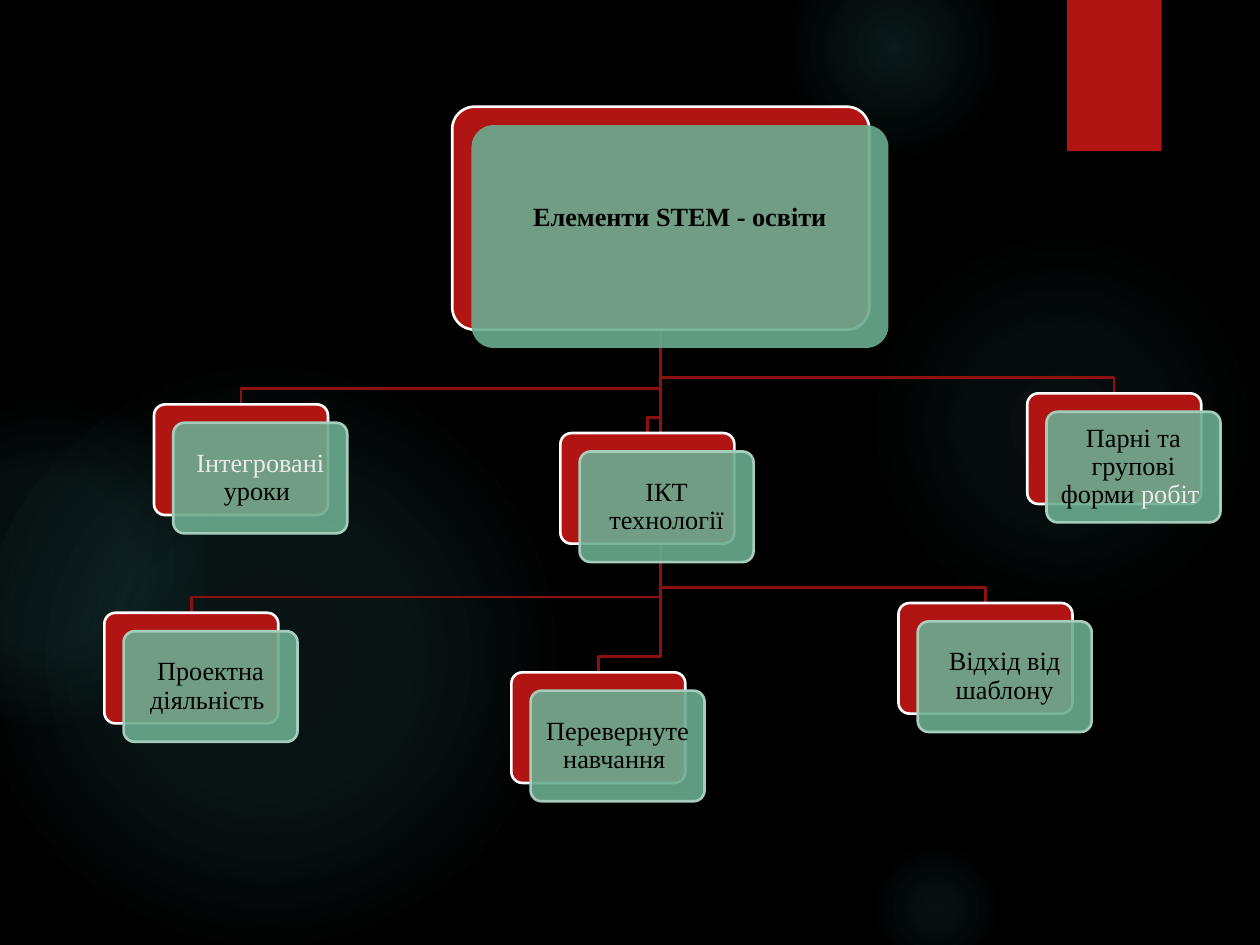
from dataclasses import dataclass

from pptx import Presentation
from pptx.dml.color import RGBColor
from pptx.enum.shapes import MSO_SHAPE as SHAPE
from pptx.enum.text import MSO_ANCHOR as ANCHOR, PP_ALIGN as ALIGN
from pptx.oxml import parse_xml
from pptx.oxml.ns import nsdecls, qn
from pptx.util import Pt


@dataclass(frozen=True)
class Theme:
    background: str = "000000"
    red: str = "B01513"
    link: str = "8D110F"
    white: str = "FFFFFF"
    green: str = "6AAC90"
    green_edge: str = "A6CDBC"
    glow: str = "50B9C1"
    dark: str = "000000"
    light: str = "EBEBEB"
    font: str = "Times New Roman"
    size: float = 15
    line: float = 1.5


THEME = Theme()

# Cards: a red back plate and a green front plate shifted by OFFSET
OFFSET = (11, 10.5)
CARD = (99.4, 63.2)
ROOT = (258.4, 61, 238.3, 127.4)
ELBOW = 9  # height of the last leg of each link

# Left, top, text runs with their colours
CHILDREN = [
    (88, 231.1, [("Інтегровані ", THEME.light), ("уроки ", THEME.dark)]),
    (59.6, 350.2, [("Проектна діяльність ", THEME.dark)]),
    (320.2, 247.5, [("ІКТ технології", THEME.dark)]),
    (292.2, 384.2, [("Перевернуте навчання ", THEME.dark)]),
    (513.4, 344.6, [("Відхід від шаблону", THEME.dark)]),
    (587, 224.8, [("Парні та групові форми ", THEME.dark), ("робіт ", THEME.light)]),
]

# Left, top, diameter, (position, opacity) stops in percent
GLOWS = [
    (496, 132, 222, [(0, 7), (36, 6), (69, 0)]),
    (448, -36, 126, [(0, 14), (36, 7), (73, 0)]),
    (496, 480, 78, [(0, 9), (36, 5), (66, 0)]),
    (-12, 210, 330, [(0, 11), (36, 10), (75, 0)]),
    (-66, 228, 186, [(0, 8), (36, 8), (72, 0)]),
]


def rgb(color):
    return RGBColor.from_string(color)


def set_line(sp, color=None):
    if color is None:
        sp.line.fill.background()
    else:
        sp.line.color.rgb = rgb(color)
        sp.line.width = Pt(THEME.line)


def add_shape(slide, kind, box, fill=None, line=None, alpha=None):
    sp = slide.shapes.add_shape(kind, *map(Pt, box))
    sp.shadow.inherit = False
    if fill:
        sp.fill.solid()
        sp.fill.fore_color.rgb = rgb(fill)
    if alpha is not None:
        color = sp.fill._xPr.find(qn("a:solidFill"))[0]
        color.append(parse_xml(f'<a:alpha {nsdecls("a")} val="{alpha * 1000}"/>'))
    set_line(sp, line)
    return sp


def add_glow(slide, left, top, diameter, stops):
    sp = add_shape(slide, SHAPE.OVAL, (left, top, diameter, diameter))
    stops_xml = "".join(
        f'<a:gs pos="{pos * 1000}"><a:srgbClr val="{THEME.glow}">'
        f'<a:alpha val="{alpha * 1000}"/></a:srgbClr></a:gs>'
        for pos, alpha in stops)
    gradient = parse_xml(
        f'<a:gradFill {nsdecls("a")}><a:gsLst>{stops_xml}</a:gsLst>'
        '<a:path path="circle"><a:fillToRect l="50000" t="50000" r="50000" b="50000"/>'
        '</a:path></a:gradFill>')
    sp.element.spPr.find(qn("a:prstGeom")).addnext(gradient)


def add_link(slide, left, top):
    """Draw the elbow from the root's bottom to the top of a child card."""
    x, y = ROOT[0] + ROOT[2] / 2, ROOT[1] + ROOT[3]
    child_x = left + CARD[0] / 2
    points = [(x, top - ELBOW), (child_x, top - ELBOW), (child_x, top)]
    fb = slide.shapes.build_freeform(Pt(x), Pt(y))
    fb.add_line_segments([(Pt(a), Pt(b)) for a, b in points], close=False)
    sp = fb.convert_to_shape()
    sp.shadow.inherit = False
    sp.fill.background()
    set_line(sp, THEME.link)


def write_text(sp, runs, bold=False, inset=4.4, bottom=4.4):
    tf = sp.text_frame
    tf.word_wrap = True
    tf.vertical_anchor = ANCHOR.MIDDLE
    tf.margin_left = tf.margin_right = tf.margin_top = Pt(inset)
    tf.margin_bottom = Pt(bottom)
    p = tf.paragraphs[0]
    p.alignment = ALIGN.CENTER
    p.line_spacing = 0.9
    for text, color in runs:
        r = p.add_run()
        r.text = text
        r.font.name = THEME.font
        r.font.size = Pt(THEME.size)
        r.font.bold = bold
        r.font.color.rgb = rgb(color)


def add_card(slide, box, runs, edge=None, **text_format):
    left, top, width, height = box
    front_box = (left + OFFSET[0], top + OFFSET[1], width, height)
    back = add_shape(slide, SHAPE.ROUNDED_RECTANGLE, box, THEME.red, THEME.white)
    front = add_shape(slide, SHAPE.ROUNDED_RECTANGLE, front_box, THEME.green, edge, alpha=90)
    for sp in (back, front):
        sp.adjustments[0] = 0.1
    write_text(front, runs, **text_format)


def main():
    prs = Presentation()
    prs.slide_width, prs.slide_height = Pt(720), Pt(540)
    slide = prs.slides.add_slide(prs.slide_layouts[6])

    # Background with soft glows and the red tab
    slide.background.fill.solid()
    slide.background.fill.fore_color.rgb = rgb(THEME.background)
    for glow in GLOWS:
        add_glow(slide, *glow)
    add_shape(slide, SHAPE.RECTANGLE, (609.8, 0, 54, 86.4), THEME.red)

    # Links lie behind the cards
    for left, top, _ in CHILDREN:
        add_link(slide, left, top)

    # Root card, its title raised above the middle, then the children
    add_card(slide, ROOT, [("Елементи STEM - освіти", THEME.dark)], bold=True, bottom=26)
    for left, top, runs in CHILDREN:
        add_card(slide, (left, top, *CARD), runs, edge=THEME.green_edge)

    prs.save("out.pptx")


if __name__ == "__main__":
    main()
